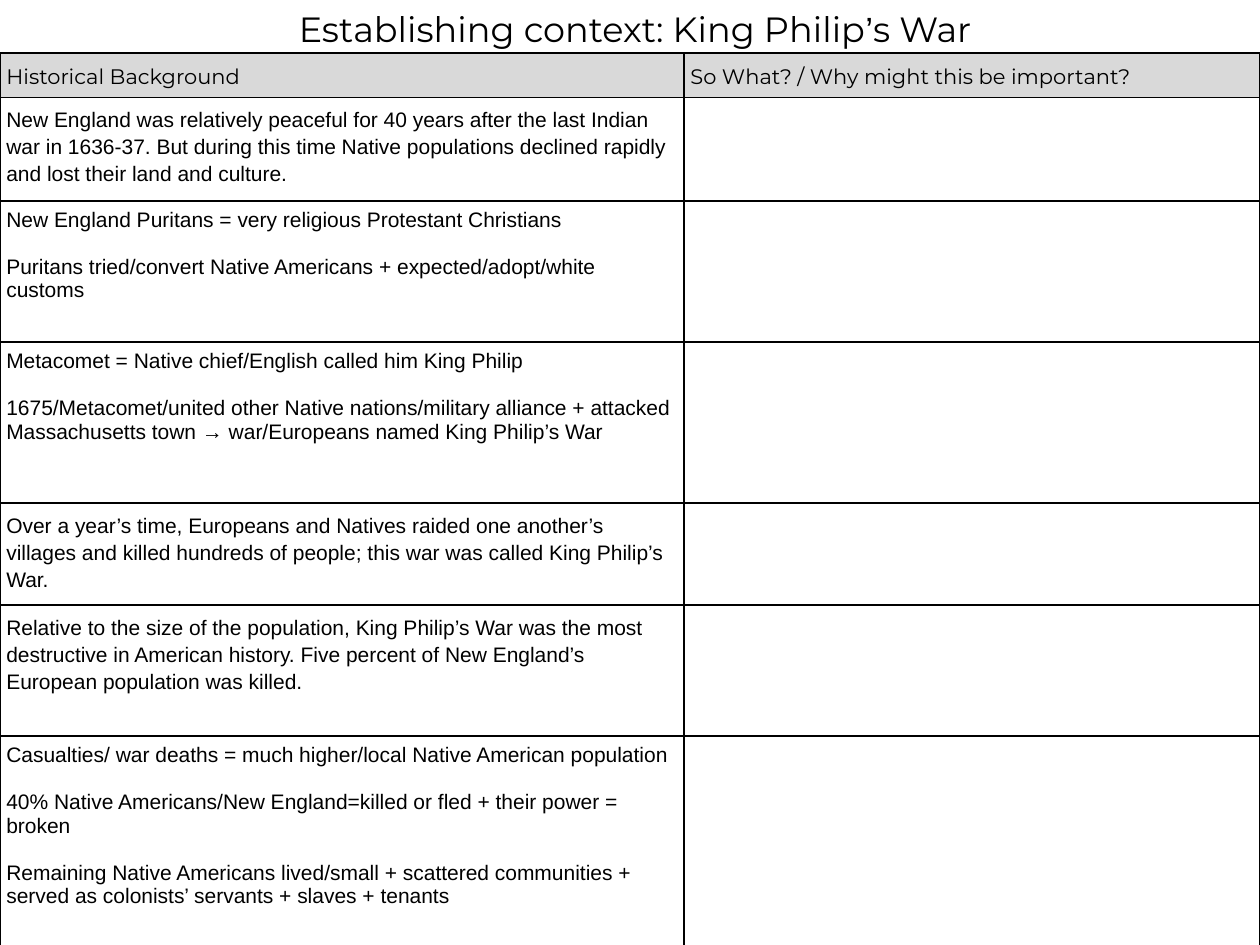
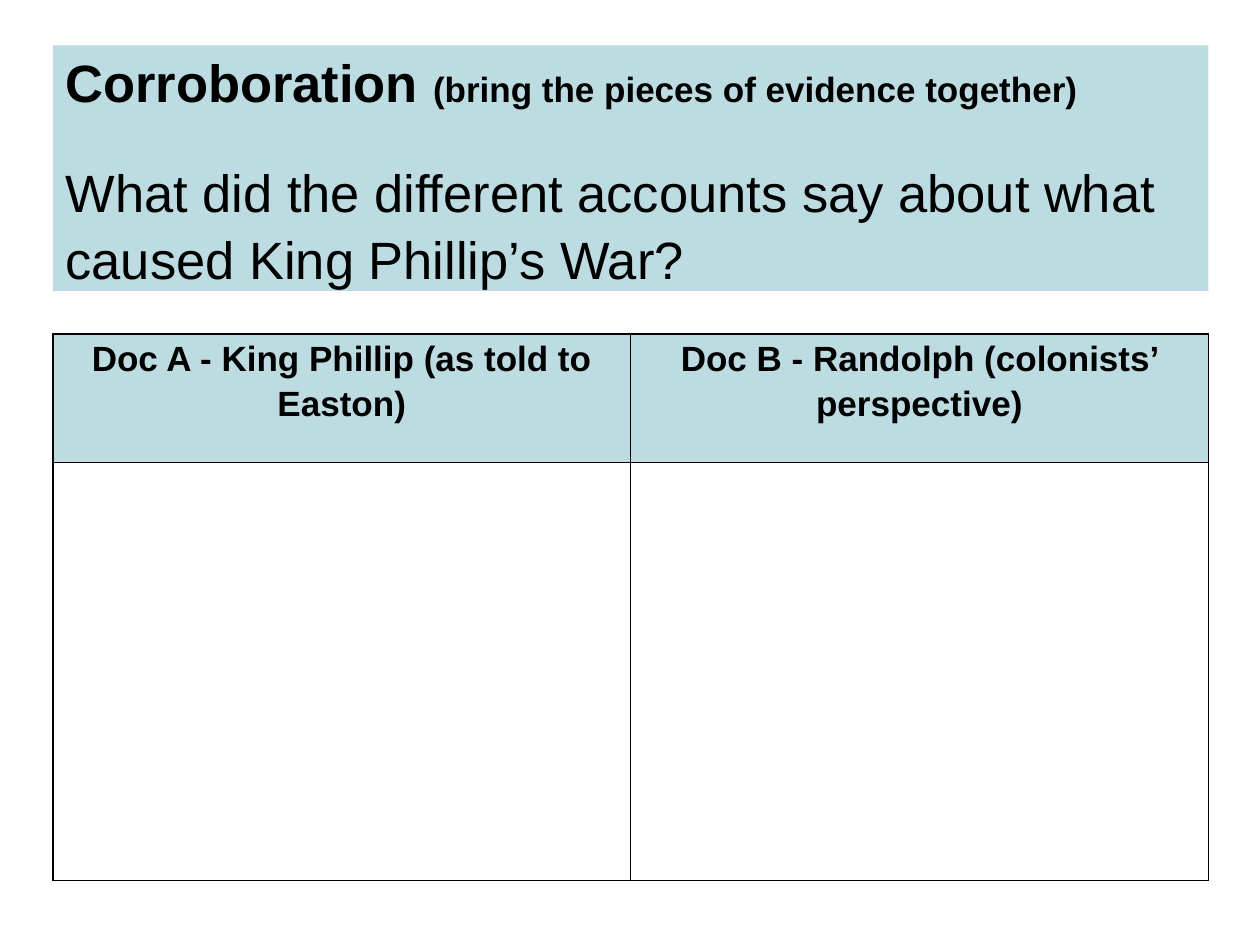
from dataclasses import dataclass

from lxml import etree
from pptx import Presentation
from pptx.dml.color import RGBColor
from pptx.enum.text import MSO_ANCHOR, MSO_AUTO_SIZE, PP_ALIGN
from pptx.oxml.ns import qn
from pptx.util import Inches, Pt

# Shared look
BLACK = RGBColor(0, 0, 0)
WHITE = RGBColor(255, 255, 255)
GREY = RGBColor(0xD9, 0xD9, 0xD9)
BLUE = RGBColor(0xBC, 0xDC, 0xE1)
SANS = "Arial"
HEAD = "Montserrat"
LEFT = PP_ALIGN.LEFT
CENTER = PP_ALIGN.CENTER
MIDDLE = MSO_ANCHOR.MIDDLE
NO_FIT = MSO_AUTO_SIZE.NONE
TITLE_ONLY = 5
LOOSE = 1.15


@dataclass(frozen=True)
class Run:
    text: str
    size: float = 12
    font: str = SANS
    bold: bool = False


@dataclass(frozen=True)
class Para:
    runs: tuple[Run, ...]
    align: PP_ALIGN = LEFT
    lines: float = 1.0
    before: float = 0


@dataclass(frozen=True)
class Cell:
    paras: tuple[Para, ...] = ()
    fill: RGBColor = WHITE


@dataclass(frozen=True)
class Grid:
    left: float
    top: float
    cols: tuple[float, ...]
    rows: tuple[float, ...]
    side: float
    edge: float
    cells: tuple[tuple[Cell, ...], ...]


def write(frame, paras: tuple[Para, ...]) -> None:
    for i, para in enumerate(paras):
        p = frame.paragraphs[0] if i == 0 else frame.add_paragraph()
        p.alignment = para.align
        p.line_spacing = para.lines
        if para.before:
            p.space_before = Pt(para.before)
        for item in para.runs:
            run = p.add_run()
            run.text = item.text
            run.font.size = Pt(item.size)
            run.font.name = item.font
            run.font.bold = item.bold
            run.font.color.rgb = BLACK


def add_title(slide, box: tuple[float, ...], paras: tuple[Para, ...],
              fill: RGBColor | None = None) -> None:
    title = slide.shapes.title
    title.left, title.top, title.width, title.height = map(Inches, box)
    if fill is not None:
        title.fill.solid()
        title.fill.fore_color.rgb = fill
    frame = title.text_frame
    frame.word_wrap = True
    frame.auto_size = NO_FIT
    frame.vertical_anchor = MIDDLE
    write(frame, paras)


def add_lines(cell) -> None:
    props = cell._tc.get_or_add_tcPr()
    for tag in ("a:lnL", "a:lnR", "a:lnT", "a:lnB"):
        line = etree.SubElement(props, qn(tag), w=str(Pt(1)))
        fill = etree.SubElement(line, qn("a:solidFill"))
        etree.SubElement(fill, qn("a:srgbClr"), val=str(BLACK))


def add_grid(slide, grid: Grid) -> None:
    table = slide.shapes.add_table(
        len(grid.rows), len(grid.cols), Inches(grid.left), Inches(grid.top),
        Inches(sum(grid.cols)), Inches(sum(grid.rows))).table
    table.first_row = False
    table.horz_banding = False
    for col, width in zip(table.columns, grid.cols):
        col.width = Inches(width)
    for row, height, cells in zip(table.rows, grid.rows, grid.cells):
        row.height = Inches(height)
        for cell, item in zip(row.cells, cells):
            cell.margin_left = cell.margin_right = Inches(grid.side)
            cell.margin_top = cell.margin_bottom = Inches(grid.edge)
            add_lines(cell)
            cell.fill.solid()
            cell.fill.fore_color.rgb = item.fill
            write(cell.text_frame, item.paras)


def header(text: str) -> Cell:
    return Cell((Para((Run(text, font=HEAD),), lines=LOOSE),), GREY)


def doc(text: str) -> Cell:
    return Cell((Para((Run(text, 20, bold=True),), CENTER, LOOSE),), BLUE)


def fact(*texts: str) -> Cell:
    """One text is set loose; several are set tight, a line apart."""
    lines = LOOSE if len(texts) == 1 else 1.0
    return Cell(tuple(Para((Run(text),), lines=lines, before=13.4 if i else 0)
                      for i, text in enumerate(texts)))


# Slide 1: background notes
FACTS = (
    fact("New England was relatively peaceful for 40 years after the last "
         "Indian war in 1636-37. But during this time Native populations "
         "declined rapidly and lost their land and culture."),
    fact("New England Puritans = very religious Protestant Christians",
         "Puritans tried/convert Native Americans + expected/adopt/white "
         "customs"),
    fact("Metacomet = Native chief/English called him King Philip",
         "1675/Metacomet/united other Native nations/military alliance + "
         "attacked Massachusetts town → war/Europeans named King Philip’s "
         "War"),
    fact("Over a year’s time, Europeans and Natives raided one another’s "
         "villages and killed hundreds of people; this war was called King "
         "Philip’s War."),
    fact("Relative to the size of the population, King Philip’s War was the "
         "most destructive in American history. Five percent of New "
         "England’s European population was killed."),
    fact("Casualties/ war deaths = much higher/local Native American "
         "population",
         "40% Native Americans/New England=killed or fled + their power = "
         "broken",
         "Remaining Native Americans lived/small + scattered communities + "
         "served as colonists’ servants + slaves + tenants"),
)
NOTES = Grid(
    0, 0.42, (5.43, 4.57), (0.35, 0.82, 1.12, 1.28, 0.81, 1.04, 1.86),
    0.05, 0.06,
    ((header("Historical Background"),
      header("So What? / Why might this be important?")),
     *((item, Cell()) for item in FACTS)))
TOPIC = (Para((Run("Establishing context: King Philip", 20, HEAD),
               Run("’", 20), Run("s War", 20, HEAD)), CENTER),)

# Slide 2: comparing the accounts
EDGE, WIDTH = 0.42, 9.17
DOCS = Grid(
    EDGE, 2.65, (WIDTH / 2,) * 2, (1.02, 3.32), 0.07, 0,
    ((doc("Doc A - King Phillip (as told to Easton)"),
      doc("Doc B - Randolph (colonists’ perspective)")),
     (Cell(), Cell())))
ASK = (
    Para((Run("Corroboration ", 30, bold=True),
          Run("(bring the pieces of evidence together)", 20, bold=True)),
         lines=1.07),
    Para((Run("What did the different accounts say about what caused King "
              "Phillip’s War?", 30),), lines=1.07, before=24),
)


def main() -> None:
    deck = Presentation()
    deck.slide_width, deck.slide_height = Inches(10), Inches(7.5)
    layout = deck.slide_layouts[TITLE_ONLY]

    slide = deck.slides.add_slide(layout)
    add_grid(slide, NOTES)
    add_title(slide, (1.98, 0, 6.12, 0.45), TOPIC)

    slide = deck.slides.add_slide(layout)
    add_grid(slide, DOCS)
    add_title(slide, (EDGE, 0.36, WIDTH, 1.95), ASK, BLUE)

    deck.save("out.pptx")


if __name__ == "__main__":
    main()
